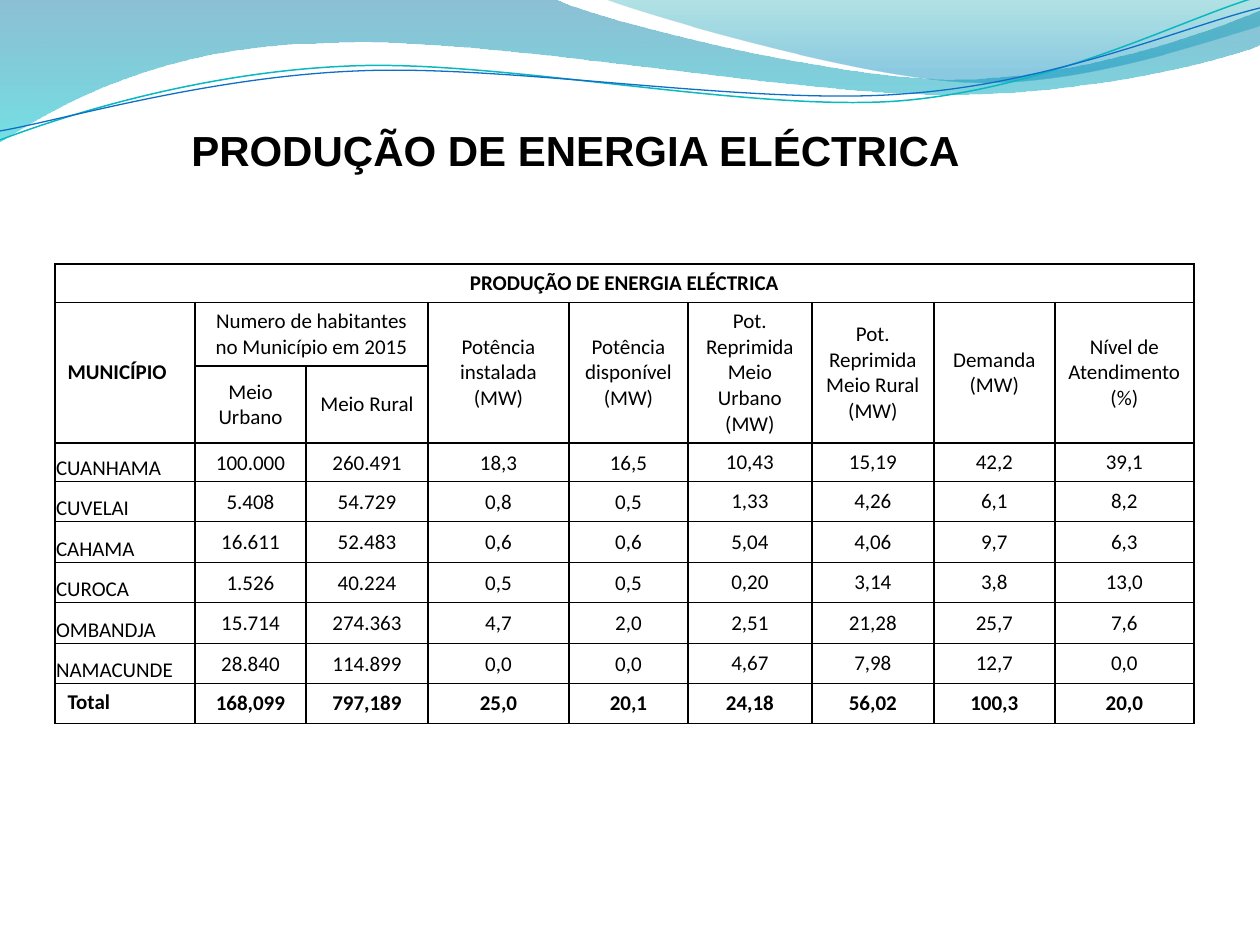
from lxml.etree import SubElement
from pptx import Presentation
from pptx.dml.color import RGBColor
from pptx.enum.text import MSO_ANCHOR as Anchor, PP_ALIGN as Align
from pptx.oxml.ns import qn
from pptx.util import Pt

PX = 914400 / 126  # EMU in one px

# Content
TITLE = "PRODUÇÃO DE ENERGIA ELÉCTRICA"
# (row, column, last row, last column, text)
HEADERS = [
    (0, 0, 0, 8, TITLE),
    (1, 0, 2, 0, "MUNICÍPIO"),
    (1, 1, 1, 2, "Numero de habitantes no Município em 2015"),
    (2, 1, 2, 1, "Meio Urbano"),
    (2, 2, 2, 2, "Meio Rural"),
    (1, 3, 2, 3, "Potência instalada (MW)"),
    (1, 4, 2, 4, "Potência disponível (MW)"),
    (1, 5, 2, 5, "Pot. Reprimida Meio Urbano (MW)"),
    (1, 6, 2, 6, "Pot. Reprimida Meio Rural (MW)"),
    (1, 7, 2, 7, "Demanda (MW)"),
    (1, 8, 2, 8, "Nível de Atendimento (%)"),
]
MUNICIPALITIES = [
    ("CUANHAMA", "100.000", "260.491", "18,3", "16,5", "10,43", "15,19", "42,2", "39,1"),
    ("CUVELAI", "5.408", "54.729", "0,8", "0,5", "1,33", "4,26", "6,1", "8,2"),
    ("CAHAMA", "16.611", "52.483", "0,6", "0,6", "5,04", "4,06", "9,7", "6,3"),
    ("CUROCA", "1.526", "40.224", "0,5", "0,5", "0,20", "3,14", "3,8", "13,0"),
    ("OMBANDJA", "15.714", "274.363", "4,7", "2,0", "2,51", "21,28", "25,7", "7,6"),
    ("NAMACUNDE", "28.840", "114.899", "0,0", "0,0", "4,67", "7,98", "12,7", "0,0"),
]
TOTAL = ("Total", "168,099", "797,189", "25,0", "20,1", "24,18", "56,02", "100,3", "20,0")
COLUMNS = [140, 111, 122, 141, 119, 124, 122, 121, 139]
ROWS = [38, 64, 77, 38, 40, 41, 40, 41, 40, 40]

# Outlines: a start point, then steps of one point (line) or three (curve)
WAVES = [
    ([(0, 0), [(554, -1)], [(600, 21), (837, 79), (955, 79)],
      [(1075, 79), (1207, 33), (1260, 11)], [(1261, 45)],
      [(1239, 55), (1096, 96), (940, 94)], [(784, 94), (481, 35), (324, 43)],
      [(163, 45), (58, 105), (-1, 142)], [(0, 0)]],
     [(0, "0074A1", 45), (1, "00C6CF", 55)]),
    ([(604, -1), [(641, 14), (859, 78), (969, 82)],
      [(1079, 87), (1211, 40), (1260, 26)], [(1260, 0)], [(604, -1)]],
     [(0, "00A1A9", 30), (0.8, "008BBF", 45)]),
]
STRANDS = [
    ([(0, 140), [(60, 117), (199, 72), (349, 66)], [(498, 59), (747, 112), (898, 101)],
      [(1050, 89), (1182, 19), (1257, -3)]], "0AB8BF", 0.85),
    ([(0, 131), [(59, 121), (207, 77), (357, 71)], [(508, 64), (752, 106), (903, 94)],
      [(1053, 84), (1186, 26), (1260, 8)]], "0F6FC6", 0.75),
]


def px(length):
    return round(length * PX)


def color(value):
    return RGBColor.from_string(value)


def write(frame, text, font="Calibri", size=12, bold=False, align=Align.CENTER):
    paragraph = frame.paragraphs[0]
    paragraph.alignment = align
    run = paragraph.add_run()
    run.text = text
    run.font.name, run.font.size, run.font.bold = font, Pt(size), bold
    run.font.color.rgb = color("000000")


def draw(shapes, outline, close):
    start, *steps = outline
    builder = shapes.build_freeform(*start, scale=PX)
    builder.add_line_segments([point for step in steps for point in step], close=close)
    shape = builder.convert_to_shape()
    shape.shadow.inherit = False
    # Join the three points of each curve into one cubic segment
    segments = iter(list(shape._element.iter(qn("a:lnTo"))))
    for step in steps:
        first, *others = [next(segments) for _ in step]
        if others:
            first.tag = qn("a:cubicBezTo")
        for other in others:
            first.append(other[0])
            other.getparent().remove(other)
    return shape


def border(cell):
    properties = cell._tc.get_or_add_tcPr()
    for side in ("a:lnL", "a:lnR", "a:lnT", "a:lnB"):
        edge = SubElement(properties, qn(side), w=str(Pt(1)))
        SubElement(SubElement(edge, qn("a:solidFill")), qn("a:srgbClr"), val="000000")


def main():
    prs = Presentation()
    prs.slide_width, prs.slide_height = px(1260), px(945)
    shapes = prs.slides.add_slide(prs.slide_layouts[6]).shapes

    # Waves and strands along the top
    for outline, stops in WAVES:
        wave = draw(shapes, outline, close=True)
        wave.line.fill.background()
        wave.fill.gradient()
        wave.fill.gradient_angle = 270
        for stop, (position, tint, _) in zip(wave.fill.gradient_stops, stops):
            stop.position, stop.color.rgb = position, color(tint)
        tints = wave._element.spPr.iter(qn("a:srgbClr"))
        for tint, (_, _, opacity) in zip(tints, stops):
            SubElement(tint, qn("a:alpha"), val=str(opacity * 1000))
    for outline, tint, width in STRANDS:
        strand = draw(shapes, outline, close=False)
        strand.fill.background()
        strand.line.color.rgb, strand.line.width = color(tint), Pt(width)

    # Energy table
    table = shapes.add_table(len(ROWS), len(COLUMNS), px(55), px(264),
                             px(sum(COLUMNS)), px(sum(ROWS))).table
    table.first_row = table.horz_banding = False
    for column, width in zip(table.columns, COLUMNS):
        column.width = px(width)
    for row, height in zip(table.rows, ROWS):
        row.height = px(height)
    for cell in table.iter_cells():
        border(cell)
        cell.fill.background()
        cell.vertical_anchor = Anchor.MIDDLE

    for top, left, bottom, right, text in HEADERS:
        cell = table.cell(top, left)
        if (top, left) != (bottom, right):
            cell.merge(table.cell(bottom, right))
        write(cell.text_frame, text, bold=left == 0,
              align=Align.LEFT if text == "MUNICÍPIO" else Align.CENTER)

    for r, values in enumerate([*MUNICIPALITIES, TOTAL], start=3):
        is_total = values is TOTAL
        for c, value in enumerate(values):
            cell = table.cell(r, c)
            write(cell.text_frame, value, bold=is_total,
                  align=Align.CENTER if c else Align.LEFT)
            if c == 0:
                cell.vertical_anchor = Anchor.TOP if is_total else Anchor.BOTTOM
            if c < 5 and not is_total:
                cell.margin_left = cell.margin_right = cell.margin_top = px(1)
                cell.margin_bottom = 0

    # Title
    title = shapes.add_textbox(px(124), px(118), px(903), px(63)).text_frame
    title.word_wrap = True
    write(title, TITLE, font="Arial", size=24, bold=True)

    prs.save("out.pptx")


if __name__ == "__main__":
    main()
